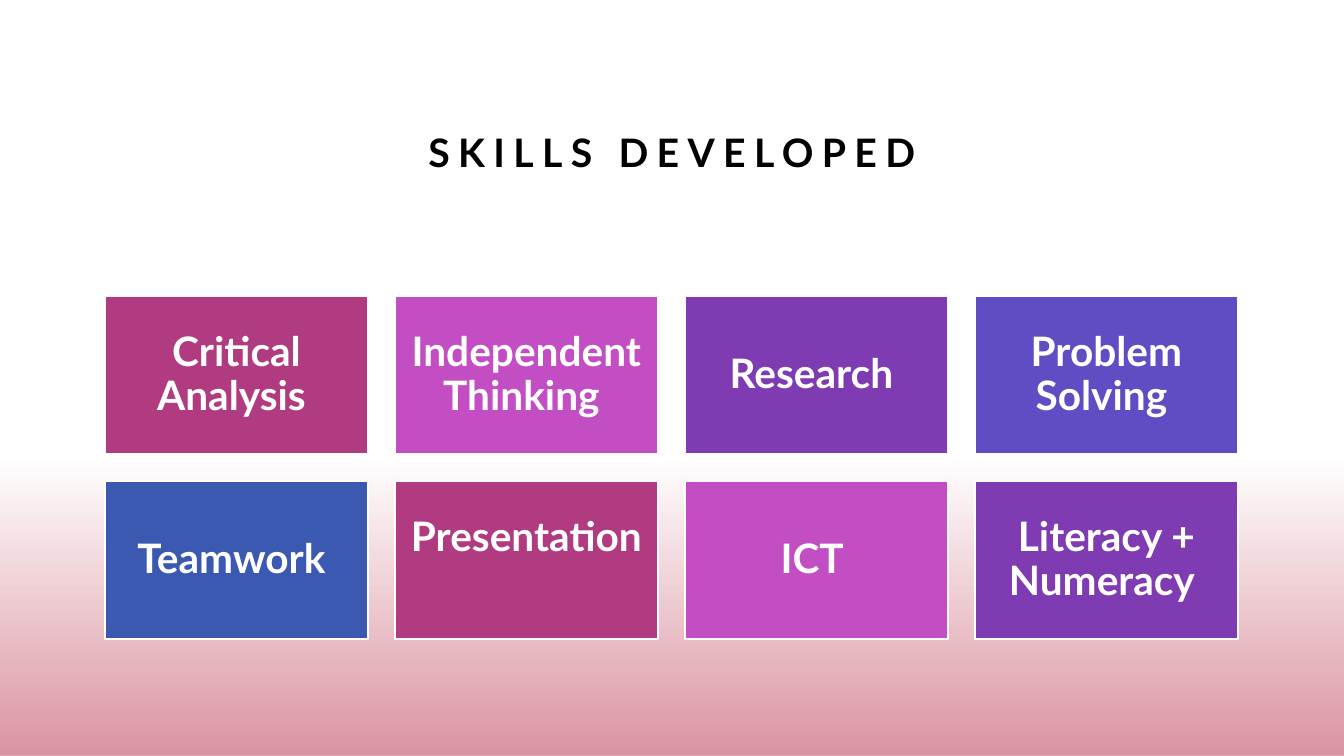
import itertools

import pptx
import pptx.dml.color
import pptx.enum.shapes
import pptx.enum.text
import pptx.oxml
import pptx.oxml.ns
import pptx.util

RGB = pptx.dml.color.RGBColor
ANCHOR = pptx.enum.text.MSO_ANCHOR
BLACK = RGB(0x00, 0x00, 0x00)
WHITE = RGB(0xFF, 0xFF, 0xFF)
ROSE = RGB(0xDB, 0x94, 0xA0)
BERRY = RGB(0xB1, 0x3B, 0x81)
PINK = RGB(0xC3, 0x4D, 0xC3)
PURPLE = RGB(0x7F, 0x3B, 0xB1)
INDIGO = RGB(0x60, 0x4D, 0xC3)
BLUE = RGB(0x3B, 0x59, 0xB1)

WIDTH, HEIGHT = 1344, 756
LEFT, TOP = 105, 296
TILE_W, TILE_H = 263, 158
STEP_X, STEP_Y = 290, 185
COLUMNS = 4
INSET = 12
LINE = 44

# Each label ends in a no-break space, which nudges its last line left.
SKILLS = [
    ("Critical Analysis ", 0),
    ("Independent Thinking ", 0),
    ("Research ", 0),
    ("Problem Solving ", 0),
    ("Teamwork ", 0),
    ("Presentation", LINE),
    ("ICT ", 0),
    ("Literacy + Numeracy ", 0),
]


def px(count):
    return pptx.util.Emu(round(count * 914400 / 100.8))


class Board:
    """Holds the text style and the slide being drawn."""

    font = "Lato"

    def __init__(self, slide):
        self.slide = slide

    def label(self, frame, text, size, color, anchor, spacing):
        frame.word_wrap = True
        frame.vertical_anchor = anchor
        line = frame.paragraphs[0]
        line.alignment = pptx.enum.text.PP_ALIGN.CENTER
        line.line_spacing = spacing
        run = line.add_run()
        run.text = text
        run.font.name = self.font
        run.font.size = pptx.util.Pt(size)
        run.font.bold = True
        run.font.color.rgb = color
        return run

    def title(self, text, *box):
        frame = self.slide.shapes.add_textbox(*map(px, box)).text_frame
        run = self.label(frame, text, 28, BLACK, ANCHOR.BOTTOM, 1.2)
        run.font._element.set("spc", "600")

    def block(self, *box):
        shape = self.slide.shapes.add_shape(
            pptx.enum.shapes.MSO_SHAPE.RECTANGLE, *map(px, box))
        shape.shadow.inherit = False
        return shape

    def fade(self, color, *box):
        """Draw a block that goes from clear at the top to full colour."""
        shape = self.block(*box)
        shape.line.fill.background()
        shape.fill.gradient()
        shape.fill.gradient_angle = 270
        for stop, place in zip(shape.fill.gradient_stops, (0.14, 1)):
            stop.color.rgb = color
            stop.position = place
        first = shape._element.spPr.find(".//" + pptx.oxml.ns.qn("a:srgbClr"))
        first.append(pptx.oxml.parse_xml(
            f'<a:alpha {pptx.oxml.ns.nsdecls("a")} val="0"/>'))

    def tile(self, text, color, lift, *box):
        """Draw a label tile; lift is extra room kept below the text."""
        shape = self.block(*box)
        shape.fill.solid()
        shape.fill.fore_color.rgb = color
        shape.line.color.rgb = WHITE
        shape.line.width = pptx.util.Pt(1)
        frame = shape.text_frame
        frame.margin_left = frame.margin_right = frame.margin_top = px(INSET)
        frame.margin_bottom = px(INSET + lift)
        self.label(frame, text, 29, WHITE, ANCHOR.MIDDLE, 0.9)


def main():
    deck = pptx.Presentation()
    deck.slide_width, deck.slide_height = px(WIDTH), px(HEIGHT)
    board = Board(deck.slides.add_slide(deck.slide_layouts[6]))
    board.title("SKILLS DEVELOPED", 168, 84, 1008, 96)
    board.fade(ROSE, 0, 412, WIDTH, HEIGHT - 412)
    colors = itertools.cycle([BERRY, PINK, PURPLE, INDIGO, BLUE])
    for spot, ((text, lift), color) in enumerate(zip(SKILLS, colors)):
        row, column = divmod(spot, COLUMNS)
        board.tile(text, color, lift, LEFT + column * STEP_X,
                   TOP + row * STEP_Y, TILE_W, TILE_H)
    deck.save("out.pptx")


if __name__ == "__main__":
    main()
